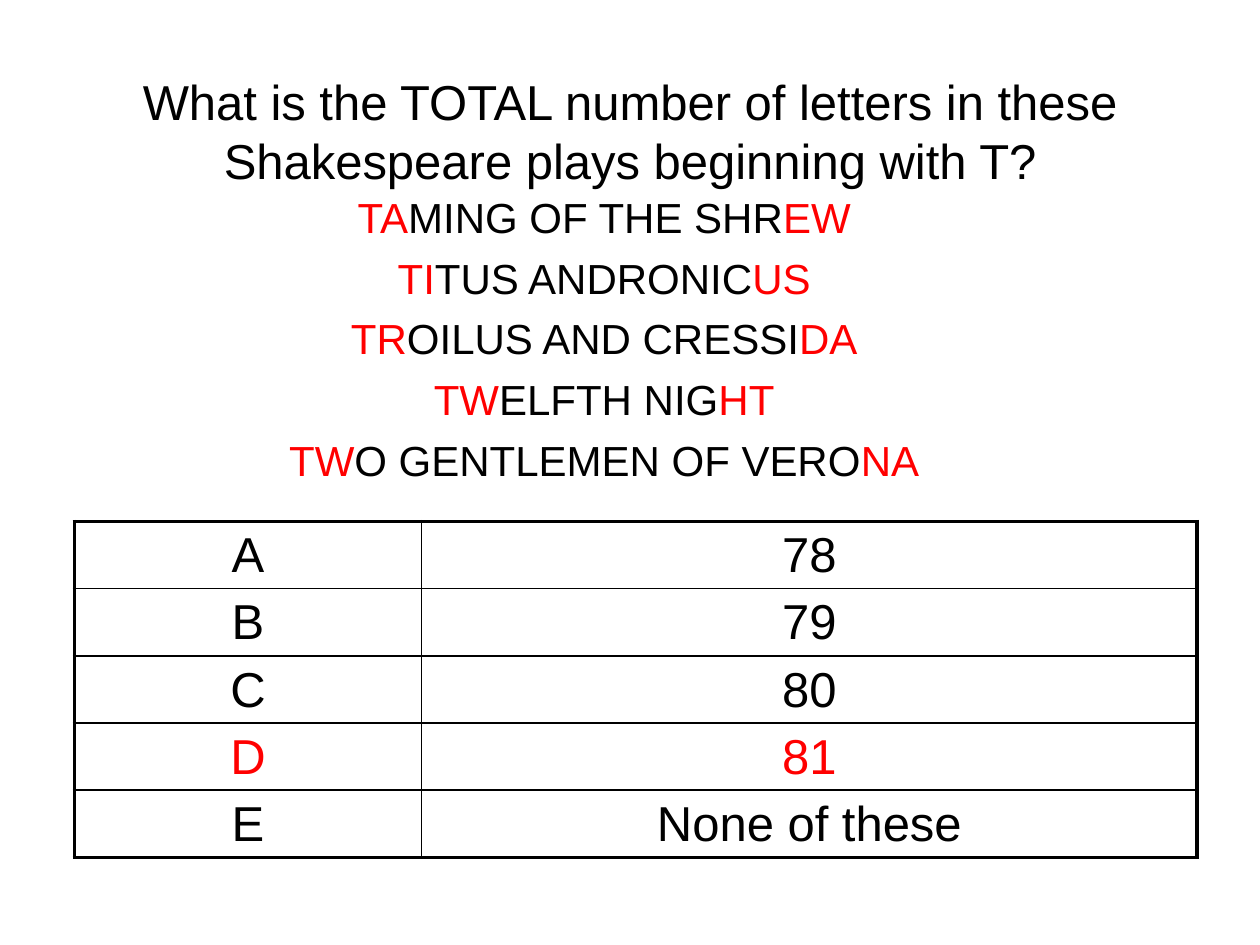
from lxml import etree
from pptx import Presentation
from pptx.dml.color import RGBColor
from pptx.enum import text
from pptx.oxml import ns
from pptx.util import Pt

COLORS = {"ink": "000000", "highlight": "FF0000"}
FONT = "Arial"
QUESTION = "What is the TOTAL number of letters in these Shakespeare plays beginning with T?"
PLAYS = [
    ("TA", "MING OF THE SHR", "EW"),
    ("TI", "TUS ANDRONIC", "US"),
    ("TR", "OILUS AND CRESSI", "DA"),
    ("TW", "ELFTH NIG", "HT"),
    ("TW", "O GENTLEMEN OF VERO", "NA"),
]
ANSWERS = [("A", "78"), ("B", "79"), ("C", "80"), ("D", "81"), ("E", "None of these")]
CORRECT = "D"
COLUMN_WIDTHS = (198.5, 443)
ROW_HEIGHT = 38.4
OUTER, INNER = 2.25, 1


def place(holder, left, top, width, height):
    holder.left, holder.top = Pt(left), Pt(top)
    holder.width, holder.height = Pt(width), Pt(height)
    holder.text_frame.word_wrap = True
    holder.text_frame.auto_size = text.MSO_AUTO_SIZE.NONE


def add_run(paragraph, words, size, color):
    paragraph.alignment = text.PP_ALIGN.CENTER
    run = paragraph.add_run()
    run.text = words
    run.font.name = FONT
    run.font.size = Pt(size)
    run.font.color.rgb = RGBColor.from_string(COLORS[color])


def remove_bullet(paragraph):
    properties = paragraph._p.get_or_add_pPr()
    properties.set("marL", "0")
    properties.set("indent", "0")
    etree.SubElement(properties, ns.qn("a:buNone"))


def add_title(slide):
    title = slide.shapes.title
    place(title, 36, 37.5, 648, 74)
    title.text_frame.vertical_anchor = text.MSO_ANCHOR.MIDDLE
    add_run(title.text_frame.paragraphs[0], QUESTION, 28, "ink")


def add_plays(slide):
    plays = slide.placeholders[1]
    place(plays, 36, 106, 618.5, 158.4)
    frame = plays.text_frame
    for index, (opening, middle, ending) in enumerate(PLAYS):
        line = frame.add_paragraph() if index else frame.paragraphs[0]
        line.space_before = Pt(5.8)
        remove_bullet(line)
        add_run(line, opening, 24, "highlight")
        add_run(line, middle, 24, "ink")
        add_run(line, ending, 24, "highlight")


def set_borders(cell, widths):
    properties = cell._tc.get_or_add_tcPr()
    for position, (side, width) in enumerate(widths.items()):
        border = etree.Element(ns.qn(f"a:ln{side}"), w=str(int(Pt(width))))
        fill = etree.SubElement(border, ns.qn("a:solidFill"))
        etree.SubElement(fill, ns.qn("a:srgbClr"), val=COLORS["ink"])
        properties.insert(position, border)


def add_answers(slide):
    rows, columns = len(ANSWERS), len(COLUMN_WIDTHS)
    answers = slide.shapes.add_table(
        rows, columns, Pt(42.5), Pt(298), Pt(sum(COLUMN_WIDTHS)), Pt(rows * ROW_HEIGHT)
    ).table
    answers.first_row = answers.horz_banding = False
    for column, width in zip(answers.columns, COLUMN_WIDTHS):
        column.width = Pt(width)
    for r, choice in enumerate(ANSWERS):
        answers.rows[r].height = Pt(ROW_HEIGHT)
        color = "highlight" if choice[0] == CORRECT else "ink"
        for c, words in enumerate(choice):
            cell = answers.cell(r, c)
            cell.fill.background()
            cell.margin_top, cell.margin_bottom = Pt(4), Pt(2)
            add_run(cell.text_frame.paragraphs[0], words, 28, color)
            set_borders(cell, {
                "L": OUTER if c == 0 else INNER,
                "R": OUTER if c == columns - 1 else INNER,
                "T": OUTER if r == 0 else INNER,
                "B": OUTER if r == rows - 1 else INNER,
            })


def main():
    deck = Presentation()
    deck.slide_width, deck.slide_height = Pt(720), Pt(540)
    slide = deck.slides.add_slide(deck.slide_layouts[1])
    add_title(slide)
    add_plays(slide)
    add_answers(slide)
    deck.save("out.pptx")


if __name__ == "__main__":
    main()
